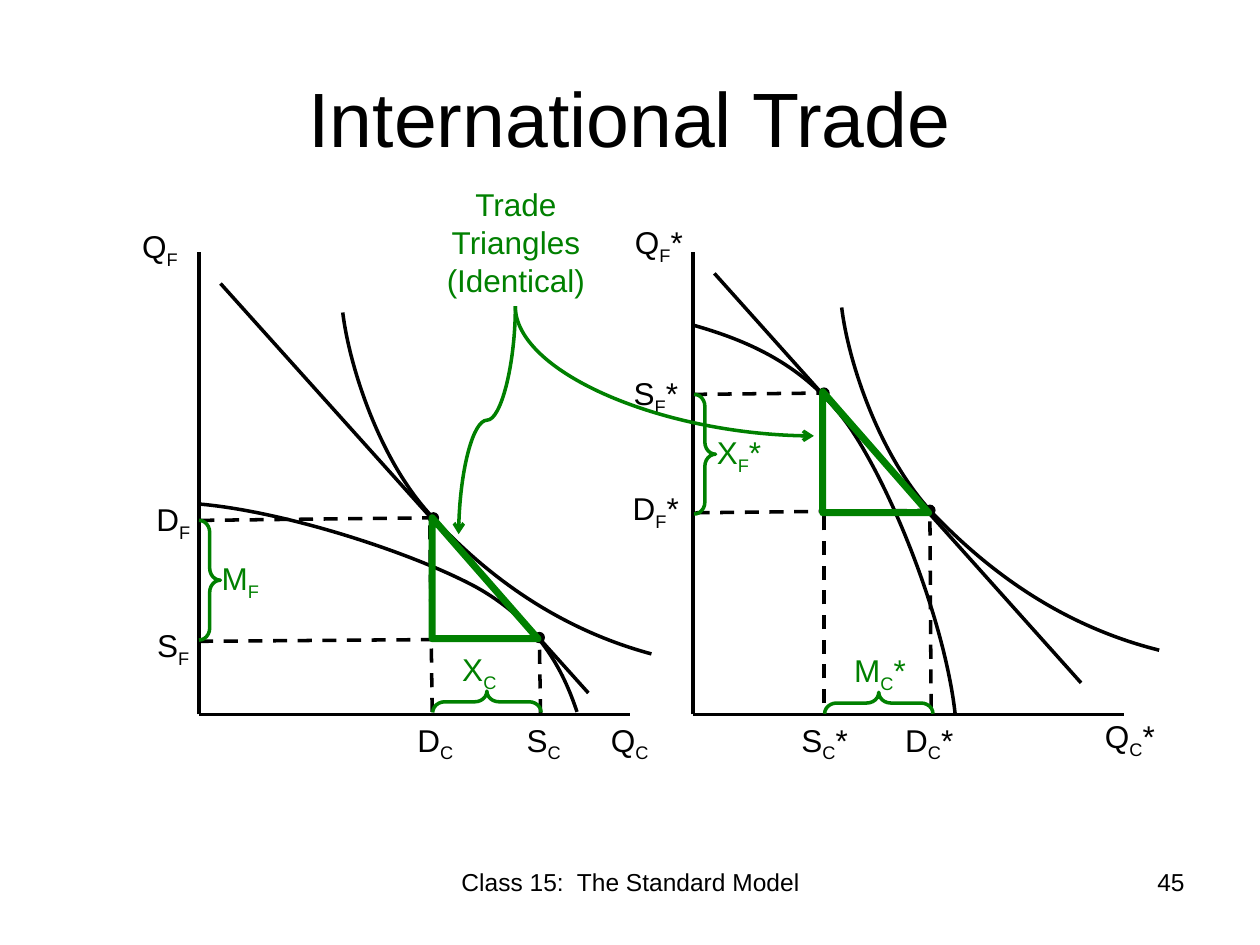
import pptx
import pptx.dml.color
import pptx.enum.dml
import pptx.enum.shapes
import pptx.enum.text
import pptx.oxml
import pptx.oxml.ns
import pptx.util

Inches = pptx.util.Inches
Align = pptx.enum.text.PP_ALIGN
Shape = pptx.enum.shapes.MSO_SHAPE
Connector = pptx.enum.shapes.MSO_CONNECTOR
qn = pptx.oxml.ns.qn

COLORS = {"black": "000000", "green": "008000"}
FONT = "Arial"
LABEL_SIZE = (0.75, 0.4)
DOT = 0.08
TRIANGLE = (0.84, 0.96)

# (left, top, width, height), lines, size, color, alignment
TEXTS = [
    ((0.5, 0.3, 9, 1.25), ["International Trade"], 44, "black", Align.CENTER),
    ((3.38, 1.42, 1.43, 1.01), ["Trade Triangles", "(Identical)"], 18, "green", Align.CENTER),
    ((3.42, 6.83, 3.17, 0.52), ["Class 15:  The Standard Model"], 14, "black", Align.CENTER),
    ((7.17, 6.83, 2.33, 0.52), ["45"], 14, "black", Align.RIGHT),
]

# (letter, subscript, suffix), left, top, color, alignment
LABELS = [
    (("Q", "C", ""), 4.75, 5.67, "black", Align.LEFT),
    (("Q", "F", ""), 1.03, 1.75, "black", Align.LEFT),
    (("Q", "C", "*"), 8.67, 5.64, "black", Align.LEFT),
    (("Q", "F", "*"), 4.94, 1.72, "black", Align.LEFT),
    (("D", "C", ""), 3.08, 5.67, "black", Align.CENTER),
    (("S", "C", ""), 3.94, 5.67, "black", Align.CENTER),
    (("D", "C", "*"), 7, 5.67, "black", Align.CENTER),
    (("S", "C", "*"), 6.17, 5.67, "black", Align.CENTER),
    (("D", "F", ""), 1, 3.92, "black", Align.CENTER),
    (("S", "F", ""), 1, 4.92, "black", Align.CENTER),
    (("S", "F", "*"), 4.83, 2.92, "black", Align.CENTER),
    (("D", "F", "*"), 4.83, 3.83, "black", Align.CENTER),
    (("M", "F", ""), 1.66, 4.39, "green", Align.LEFT),
    (("X", "F", "*"), 5.59, 3.39, "green", Align.LEFT),
    (("X", "C", ""), 3.57, 5.11, "green", Align.LEFT),
    (("M", "C", "*"), 6.68, 5.12, "green", Align.LEFT),
]

ORIGINS = [(1.58, 5.67), (5.5, 5.67)]
AXIS_WIDTH, AXIS_HEIGHT = 3.42, 3.67
PRICE_LINES = [((1.75, 2.25), (4.67, 5.5)), ((5.67, 2.17), (8.58, 5.42))]
GUIDES = [
    ((5.5, 3.13), (6.5, 3.12)), ((6.54, 5.58), (6.54, 3.16)),
    ((1.58, 5.09), (4.28, 5.07)), ((3.43, 5.65), (3.41, 4.08)),
    ((4.29, 5.66), (4.28, 5.02)), ((1.59, 4.13), (3.4, 4.11)),
    ((5.52, 4.07), (7.38, 4.05)), ((7.39, 5.62), (7.38, 4.04)),
]

# Start point, then two control points and an end point for each Bézier segment
FRONTIERS = [
    [(1.58, 4), (2.27, 4.06), (3.28, 4.39), (3.78, 4.66),
     (4.28, 4.94), (4.47, 5.32), (4.58, 5.65)],
    [(7.58, 5.66), (7.5, 4.95), (7.1, 3.92), (6.75, 3.4),
     (6.4, 2.89), (5.92, 2.7), (5.5, 2.58)],
]
INDIFFERENCE_CURVES = [
    [(5.17, 5.19), (4.39, 4.98), (3.82, 4.53), (3.41, 4.08),
     (3, 3.63), (2.77, 2.89), (2.72, 2.48)],
    [(9.2, 5.16), (8.4, 4.96), (7.82, 4.51), (7.39, 4.06),
     (6.97, 3.6), (6.73, 2.86), (6.68, 2.44)],
]

DOTS = [(4.24, 5.02), (6.5, 3.08), (3.4, 4.07), (7.34, 4.01)]
TRIANGLES = [(3.43, 4.11), (6.53, 3.11)]
# (left, top, width, height), rotation
BRACES = [
    ((1.58, 4.13, 0.17, 0.95), 0), ((5.51, 3.13, 0.17, 0.95), 0),
    ((3.78, 5.14, 0.17, 0.86), 270), ((6.89, 5.15, 0.17, 0.86), 270),
]
# Box before rotation, rotation, flipped, preset
POINTERS = [
    ((2.96, 3.11, 1.81, 0.45), 90, False, "curvedConnector3"),
    ((4.76, 1.76, 1.03, 2.37), 270, True, "curvedConnector2"),
]


def rgb(name):
    return pptx.dml.color.RGBColor.from_string(COLORS[name])


def inches(values):
    return [Inches(value) for value in values]


def set_line(shape, color="black", width=2):
    shape.line.color.rgb = rgb(color)
    shape.line.width = pptx.util.Pt(width)


def add_text(slide, box, lines, size, color, alignment):
    """Each line is a string or a (letter, subscript, suffix) tuple."""
    frame = slide.shapes.add_textbox(*inches(box)).text_frame
    frame.word_wrap = True
    for number, line in enumerate(lines):
        paragraph = frame.add_paragraph() if number else frame.paragraphs[0]
        paragraph.alignment = alignment
        paragraph.font.name = FONT
        paragraph.font.size = pptx.util.Pt(size)
        paragraph.font.color.rgb = rgb(color)
        parts = [line] if isinstance(line, str) else line
        for position, part in enumerate(parts):
            if part:
                run = paragraph.add_run()
                run.text = part
                if position == 1:
                    run._r.get_or_add_rPr().set("baseline", "-25000")
    return frame


def add_line(slide, start, end, color="black", kind=Connector.STRAIGHT):
    line = slide.shapes.add_connector(kind, *inches(start + end))
    set_line(line, color)
    line._element.spPr.append(pptx.oxml.parse_xml(
        '<a:effectLst xmlns:a="http://schemas.openxmlformats.org/drawingml/2006/main"/>'))
    return line


def add_curve(slide, points):
    builder = slide.shapes.build_freeform(*inches(points[0]), scale=1.0)
    builder.add_line_segments([inches(point) for point in points[1:]], close=False)
    curve = builder.convert_to_shape()
    curve.shadow.inherit = False
    curve.fill.background()
    set_line(curve)
    # Merge every three straight segments into one Bézier segment
    segments = list(curve._element.iter(qn("a:lnTo")))
    for first in range(0, len(segments), 3):
        bezier = segments[first]
        bezier.tag = qn("a:cubicBezTo")
        for segment in segments[first + 1:first + 3]:
            bezier.append(segment[0])
            segment.getparent().remove(segment)


def add_outline(slide, kind, box, width=2):
    shape = slide.shapes.add_shape(kind, *inches(box))
    shape.shadow.inherit = False
    shape.fill.background()
    set_line(shape, "green", width)
    return shape


def add_pointer(slide, box, rotation, flipped, preset):
    left, top, width, height = box
    pointer = add_line(slide, (left, top), (left + width, top + height), "green", Connector.CURVE)
    properties = pointer._element.spPr
    transform = properties.find(qn("a:xfrm"))
    transform.set("rot", str(rotation * 60000))
    if flipped:
        transform.set("flipH", "1")
    properties.find(qn("a:prstGeom")).set("prst", preset)
    outline = properties.find(qn("a:ln"))
    outline.append(outline.makeelement(qn("a:tailEnd"), {"type": "arrow"}))


def main():
    presentation = pptx.Presentation()
    presentation.slide_width, presentation.slide_height = inches((10, 7.5))
    slide = presentation.slides.add_slide(presentation.slide_layouts[6])

    for x, y in ORIGINS:
        add_line(slide, (x, y), (x + AXIS_WIDTH, y))
        add_line(slide, (x, y), (x, y - AXIS_HEIGHT))
    for points in FRONTIERS + INDIFFERENCE_CURVES:
        add_curve(slide, points)
    for start, end in PRICE_LINES:
        add_line(slide, start, end)
    for start, end in GUIDES:
        add_line(slide, start, end).line.dash_style = pptx.enum.dml.MSO_LINE.DASH
    for corner in DOTS:
        dot = add_outline(slide, Shape.OVAL, corner + (DOT, DOT), 0.75)
        dot.fill.solid()
        dot.fill.fore_color.rgb = dot.line.color.rgb = rgb("black")
    for corner in TRIANGLES:
        add_outline(slide, Shape.RIGHT_TRIANGLE, corner + TRIANGLE, 4)
    for box, rotation in BRACES:
        brace = add_outline(slide, Shape.LEFT_BRACE, box)
        brace.adjustments[0], brace.adjustments[1] = 0.56, 0.5
        brace.rotation = rotation
        brace._element.spPr.find(qn("a:xfrm")).set("flipH", "1")
    for label, left, top, color, alignment in LABELS:
        add_text(slide, (left, top) + LABEL_SIZE, [label], 18, color, alignment)
    frames = [add_text(slide, *text) for text in TEXTS]
    frames[0].vertical_anchor = pptx.enum.text.MSO_ANCHOR.MIDDLE
    for pointer in POINTERS:
        add_pointer(slide, *pointer)
    presentation.save("out.pptx")


if __name__ == "__main__":
    main()
